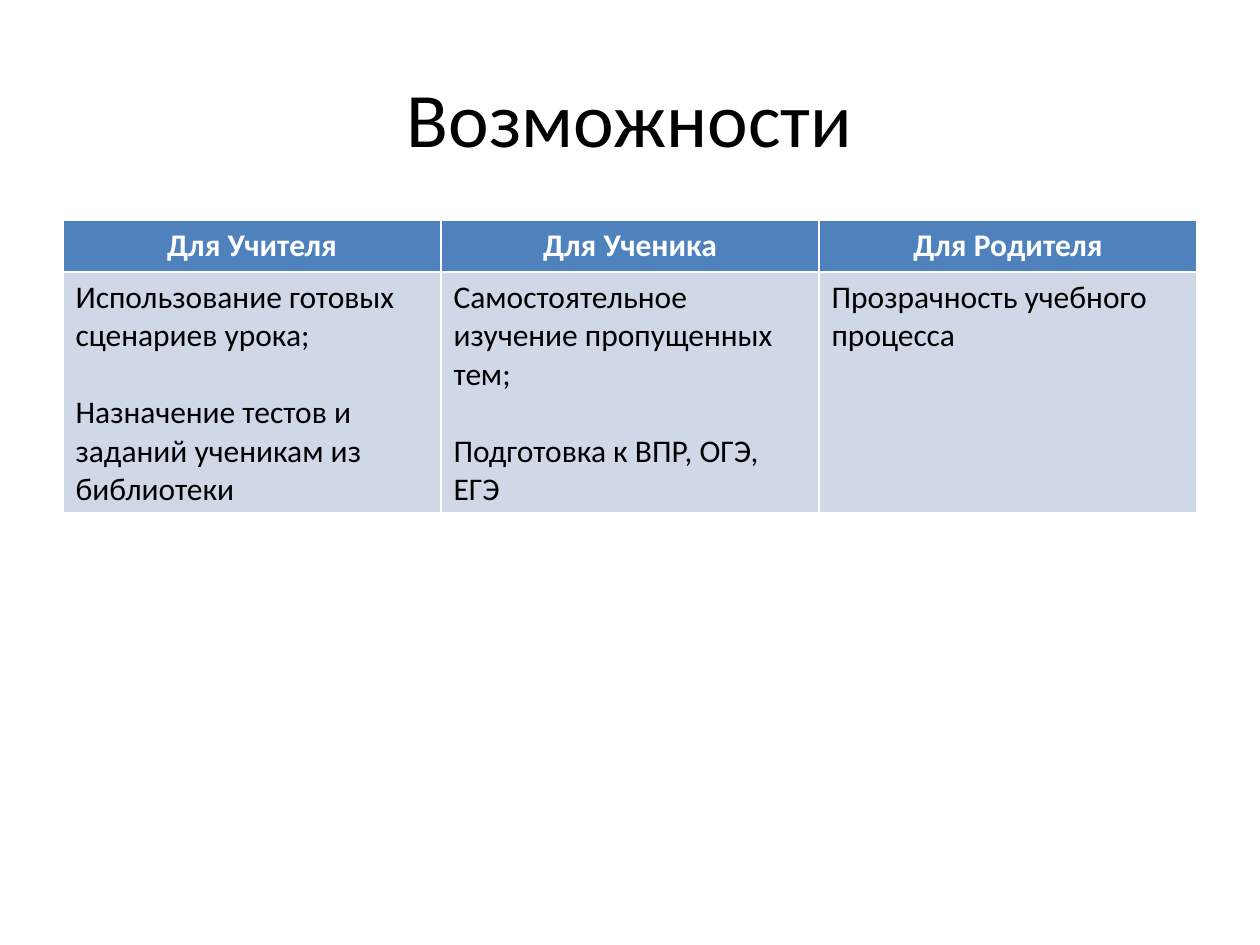
from dataclasses import dataclass

from pptx import Presentation
from pptx.dml.color import RGBColor
from pptx.enum.text import MSO_ANCHOR, PP_ALIGN
from pptx.util import Inches, Pt

# Content: one entry per audience, with its list of benefits
HEADING = "Возможности"
BENEFITS = {
    "Для Учителя": [
        "Использование готовых сценариев урока;",
        "Назначение тестов и заданий ученикам из библиотеки",
    ],
    "Для Ученика": [
        "Самостоятельное изучение пропущенных тем;",
        "Подготовка к ВПР, ОГЭ, ЕГЭ",
    ],
    "Для Родителя": ["Прозрачность учебного процесса"],
}


@dataclass(frozen=True)
class Theme:
    font: str = "Calibri"
    heading_size: int = 44
    table_size: int = 18
    benefit_gap: int = 22
    ink: str = "000000"
    header_ink: str = "FFFFFF"
    header_fill: str = "4F81BD"
    body_fill: str = "D0D8E8"


THEME = Theme()
SLIDE_W, SLIDE_H = Inches(10), Inches(7.5)
MARGIN = int(SLIDE_W * 0.05)
CONTENT_W = SLIDE_W - 2 * MARGIN
HEADING_TOP, HEADING_H = int(SLIDE_H * 0.04), Inches(1.25)
TABLE_TOP = Inches(1.75)
ROW_HEIGHTS = Inches(0.41), Inches(1.9)


def write(frame, lines, size, color, bold=False, align=PP_ALIGN.LEFT, gap=0):
    for i, line in enumerate(lines):
        paragraph = frame.paragraphs[0] if i == 0 else frame.add_paragraph()
        paragraph.text = line
        paragraph.alignment = align
        if i:
            paragraph.space_before = Pt(gap)
        font = paragraph.font
        font.name, font.size, font.bold = THEME.font, Pt(size), bold
        font.color.rgb = RGBColor.from_string(color)


def fill_cell(cell, fill, lines, color, **style):
    cell.fill.solid()
    cell.fill.fore_color.rgb = RGBColor.from_string(fill)
    write(cell.text_frame, lines, THEME.table_size, color, **style)


def main():
    deck = Presentation()
    deck.slide_width, deck.slide_height = SLIDE_W, SLIDE_H
    slide = deck.slides.add_slide(deck.slide_layouts[6])

    # Heading
    heading = slide.shapes.add_textbox(MARGIN, HEADING_TOP, CONTENT_W, HEADING_H).text_frame
    heading.word_wrap = True
    heading.vertical_anchor = MSO_ANCHOR.MIDDLE
    write(heading, [HEADING], THEME.heading_size, THEME.ink, align=PP_ALIGN.CENTER)

    # Benefits table: its default style supplies the white borders
    benefits_table = slide.shapes.add_table(
        len(ROW_HEIGHTS), len(BENEFITS), MARGIN, TABLE_TOP, CONTENT_W, sum(ROW_HEIGHTS)
    ).table
    for row, height in zip(benefits_table.rows, ROW_HEIGHTS):
        row.height = height
    for column, (audience, benefits) in enumerate(BENEFITS.items()):
        fill_cell(benefits_table.cell(0, column), THEME.header_fill, [audience],
                  THEME.header_ink, bold=True, align=PP_ALIGN.CENTER)
        fill_cell(benefits_table.cell(1, column), THEME.body_fill, benefits,
                  THEME.ink, gap=THEME.benefit_gap)

    deck.save("out.pptx")


if __name__ == "__main__":
    main()
